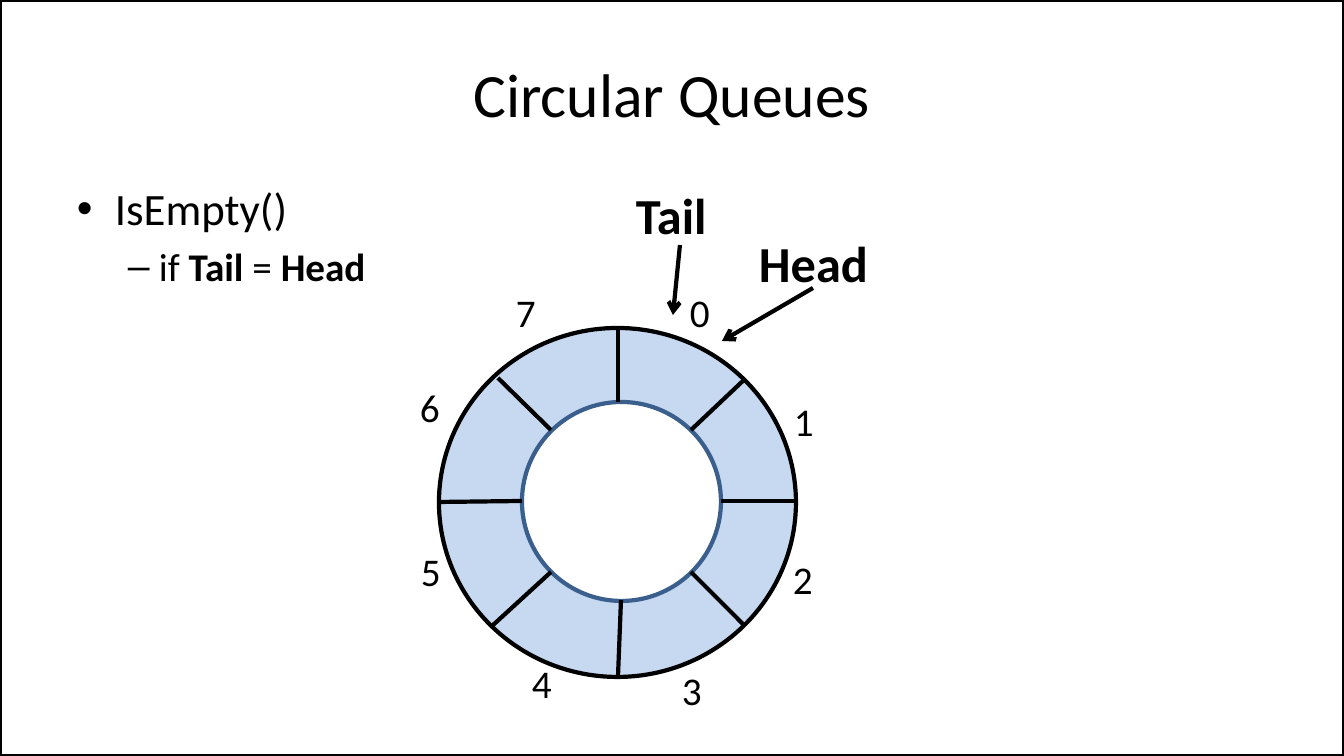
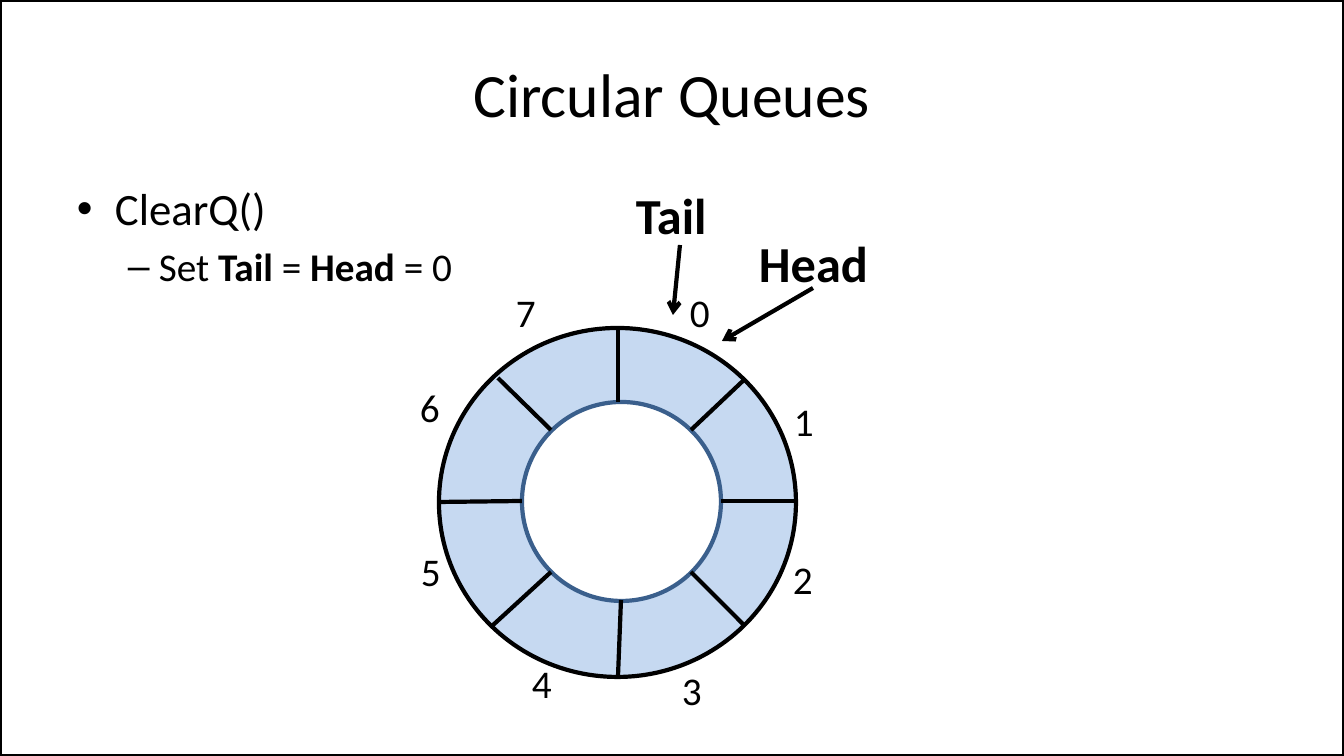
from lxml import etree
from pptx import Presentation
from pptx.dml.color import RGBColor
from pptx.enum.shapes import MSO_CONNECTOR as CONN, MSO_SHAPE as SHAPE
from pptx.enum.text import MSO_ANCHOR as ANCHOR, MSO_AUTO_SIZE as AUTO, PP_ALIGN as ALIGN
from pptx.oxml.ns import qn
from pptx.util import Emu, Pt

WIDTH, HEIGHT = 1344, 756
SCALE = 12192000 / WIDTH


def px(n):
    return Emu(round(n * SCALE))


def rgb(color):
    return RGBColor.from_string(color)


class Deck:
    FONT = "Calibri"
    INK, PAPER = "000000", "FFFFFF"
    RING, RIM = "C6D9F1", "3A5F8C"
    STROKE = 3
    # level: bullet, left margin, indent, size, space before
    LEVELS = [("•", 38, -38, 32, 0), ("–", 82, -31, 28, 5.6)]

    def __init__(self):
        self.prs = Presentation()
        self.prs.slide_width, self.prs.slide_height = px(WIDTH), px(HEIGHT)
        self.s = None

    def slide(self, title):
        """Start a slide with the shared border and title."""
        self.s = self.prs.slides.add_slide(self.prs.slide_layouts[6])
        self.shape(SHAPE.RECTANGLE, 0, 0, WIDTH, HEIGHT)
        tf = self.box(67, 30, 1210, 126)
        tf.vertical_anchor = ANCHOR.MIDDLE
        p = tf.paragraphs[0]
        p.alignment = ALIGN.CENTER
        self.run(p, title, 44)

    def shape(self, kind, x, y, w, h, fill=None, line=INK):
        sp = self.s.shapes.add_shape(kind, px(x), px(y), px(w), px(h))
        sp.shadow.inherit = False
        if fill:
            sp.fill.solid()
            sp.fill.fore_color.rgb = rgb(fill)
        else:
            sp.fill.background()
        sp.line.color.rgb = rgb(line)
        sp.line.width = Pt(self.STROKE)

    def box(self, x, y, w, h, wrap=True):
        tf = self.s.shapes.add_textbox(px(x), px(y), px(w), px(h)).text_frame
        tf.word_wrap = wrap
        tf.auto_size = AUTO.NONE if wrap else AUTO.SHAPE_TO_FIT_TEXT
        return tf

    def run(self, p, text, size, bold=False):
        r = p.add_run()
        r.text = text
        r.font.name, r.font.size, r.font.bold = self.FONT, Pt(size), bold
        r.font.color.rgb = rgb(self.INK)

    def label(self, text, x, y, w, h, size, bold=False):
        self.run(self.box(x, y, w, h, wrap=False).paragraphs[0], text, size, bold)

    def bullets(self, items):
        """Each item is a level and its (text, bold) runs."""
        tf = self.box(67, 176, 1210, 499)
        for i, (level, runs) in enumerate(items):
            p = tf.add_paragraph() if i else tf.paragraphs[0]
            char, margin, indent, size, before = self.LEVELS[level]
            pPr = p._p.get_or_add_pPr()
            pPr.set("marL", str(px(margin)))
            pPr.set("indent", str(px(indent)))
            etree.SubElement(pPr, qn("a:buFont"), typeface="Arial")
            etree.SubElement(pPr, qn("a:buChar"), char=char)
            p.level = level
            if i:
                p.space_before = Pt(before)
            for text, bold in runs:
                self.run(p, text, size, bold)

    def line(self, start, end, arrow=False):
        cn = self.s.shapes.add_connector(CONN.STRAIGHT, *map(px, start + end))
        cn.line.color.rgb = rgb(self.INK)
        cn.line.width = Pt(self.STROKE)
        if arrow:
            etree.SubElement(cn.line._get_or_add_ln(), qn("a:tailEnd"), type="arrow")
        etree.SubElement(cn._element.spPr, qn("a:effectLst"))

    def queue(self):
        """Ring of eight cells with both pointers at cell 0."""
        self.shape(SHAPE.OVAL, 439, 328, 357, 349, self.RING)
        self.shape(SHAPE.OVAL, 522, 402, 199, 199, self.PAPER, self.RIM)
        for start, end in DIVIDERS:
            self.line(start, end)
        for i, (x, y) in enumerate(INDEX_SPOTS):
            self.label(str(i), x, y, 40, 57, 28)
        self.label("Tail", 626, 179, 92, 72, 36, bold=True)
        self.label("Head", 749, 227, 131, 72, 36, bold=True)
        self.line((813, 288), (722, 341), arrow=True)
        self.line((680, 245), (673, 315), arrow=True)


# Cell borders, from inner rim to outer rim, clockwise from the top
DIVIDERS = [
    ((618, 402), (618, 328)), ((691, 430), (745, 379)),
    ((721, 501), (797, 501)), ((691, 572), (745, 626)),
    ((621, 600), (618, 677)), ((551, 572), (492, 626)),
    ((522, 501), (439, 502)), ((551, 430), (498, 378)),
]
# Top left corners of the index labels 0 to 7
INDEX_SPOTS = [(680, 283), (784, 392), (783, 550), (672, 661),
               (522, 654), (411, 542), (410, 378), (506, 283)]
# Operation and the runs of its rule
OPERATIONS = [
    ("IsEmpty()", [("if ", False), ("Tail", True), (" = ", False), ("Head", True)]),
    ("ClearQ()", [("Set ", False), ("Tail", True), (" = ", False), ("Head", True),
                  (" = 0", False)]),
]


def main():
    deck = Deck()
    for name, rule in OPERATIONS:
        deck.slide("Circular Queues")
        deck.bullets([(0, [(name, False)]), (1, rule)])
        deck.queue()
    deck.prs.save("out.pptx")


if __name__ == "__main__":
    main()
